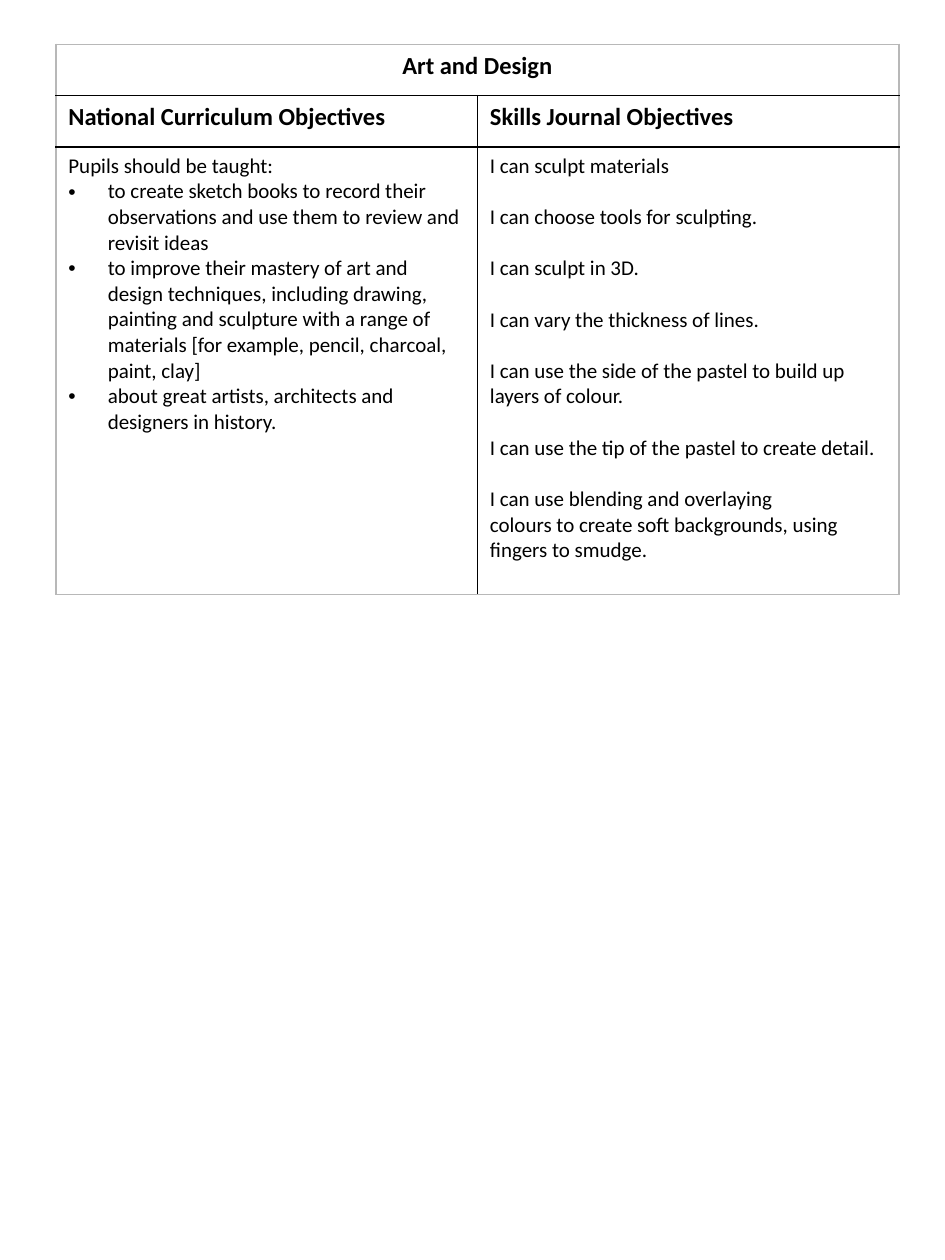
from lxml import etree
from pptx import Presentation
from pptx.dml.color import RGBColor
from pptx.enum.text import PP_ALIGN
from pptx.oxml.ns import qn
from pptx.util import Pt

CENTER, LEFT = PP_ALIGN.CENTER, PP_ALIGN.LEFT

SUBJECT = "Art and Design"
HEADINGS = ["National Curriculum Objectives", "Skills Journal Objectives"]
CURRICULUM_INTRO = "Pupils should be taught:"
CURRICULUM = [
    "to create sketch books to record their observations and use them to review and revisit ideas",
    "to improve their mastery of art and design techniques, including drawing, painting and "
    "sculpture with a range of materials [for example, pencil, charcoal, paint, clay]",
    "about great artists, architects and designers in history.",
]
SKILLS = [
    ["I can sculpt materials"],
    ["I can choose tools for sculpting."],
    ["I can sculpt in 3D."],
    ["I can vary the thickness of lines."],
    ["I can use the side of the pastel to build up layers of colour."],
    ["I can use the tip of the pastel to create detail."],
    [
        "I can use blending and overlaying",
        "colours to create soft backgrounds, using",
        "fingers to smudge.",
    ],
]

THEME = {
    "font": "Calibri",
    "heading": 14,
    "body": 12,
    "ink": "000000",
    "paper": "FFFFFF",
    "frame": "B8B8B8",
}
PAGE_WIDTH, PAGE_HEIGHT = 540, 720
TABLE_LEFT, TABLE_TOP = 31.9, 25.4
COLUMN_WIDTH = 240.9
ROW_HEIGHTS = [29.2, 29.5, 255.6]
BULLET_INDENT = 22.5
SKILL_GAP = 14.65
RULE, HEADING_RULE = 1, 1.5


def write(cell, lines, size, bold=False, align=LEFT):
    for index, (text, bulleted, gap) in enumerate(lines):
        frame = cell.text_frame
        paragraph = frame.paragraphs[0] if index == 0 else frame.add_paragraph()
        paragraph.alignment = align
        paragraph.space_after = Pt(gap)
        run = paragraph.add_run()
        run.text = text
        font_format = {"name": THEME["font"], "size": Pt(size), "bold": bold}
        for attribute, value in font_format.items():
            setattr(run.font, attribute, value)
        run.font.color.rgb = RGBColor.from_string(THEME["ink"])
        if bulleted:
            properties = paragraph._p.get_or_add_pPr()
            properties.set("marL", str(Pt(BULLET_INDENT)))
            properties.set("indent", str(-Pt(BULLET_INDENT)))
            etree.SubElement(properties, qn("a:buFont")).set("typeface", "Arial")
            etree.SubElement(properties, qn("a:buChar")).set("char", "•")


def set_borders(cell, borders):
    properties = cell._tc.get_or_add_tcPr()
    for index, (side, (color, width)) in enumerate(borders.items()):
        line = etree.Element(qn(f"a:ln{side}"), w=str(Pt(width)))
        fill = etree.SubElement(line, qn("a:solidFill"))
        etree.SubElement(fill, qn("a:srgbClr")).set("val", color)
        properties.insert(index, line)


def format_cells(table):
    frame, rule = (THEME["frame"], RULE), (THEME["ink"], RULE)
    row_edges = [frame, rule, (THEME["ink"], HEADING_RULE), frame]
    column_edges = [frame, rule, frame]
    for r, row in enumerate(table.rows):
        for c, cell in enumerate(row.cells):
            cell.fill.solid()
            cell.fill.fore_color.rgb = RGBColor.from_string(THEME["paper"])
            edges = [frame, frame, frame] if r == 0 else column_edges
            set_borders(cell, {
                "L": edges[c],
                "R": edges[c + 1],
                "T": row_edges[r],
                "B": row_edges[r + 1],
            })


def main():
    presentation = Presentation()
    presentation.slide_width = Pt(PAGE_WIDTH)
    presentation.slide_height = Pt(PAGE_HEIGHT)
    slide = presentation.slides.add_slide(presentation.slide_layouts[6])

    table = slide.shapes.add_table(
        len(ROW_HEIGHTS), len(HEADINGS), Pt(TABLE_LEFT), Pt(TABLE_TOP),
        Pt(COLUMN_WIDTH * len(HEADINGS)), Pt(sum(ROW_HEIGHTS)),
    ).table
    for column in table.columns:
        column.width = Pt(COLUMN_WIDTH)
    for row, height in zip(table.rows, ROW_HEIGHTS):
        row.height = Pt(height)
    format_cells(table)
    table.cell(0, 0).merge(table.cell(0, len(HEADINGS) - 1))

    write(table.cell(0, 0), [(SUBJECT, False, 0)], THEME["heading"], True, CENTER)
    for c, heading in enumerate(HEADINGS):
        write(table.cell(1, c), [(heading, False, 0)], THEME["heading"], True)

    curriculum_lines = [(CURRICULUM_INTRO, False, 0)]
    curriculum_lines += [(objective, True, 0) for objective in CURRICULUM]
    skill_lines = [
        (line, False, SKILL_GAP if line == skill[-1] else 0)
        for skill in SKILLS
        for line in skill
    ]
    for c, lines in enumerate([curriculum_lines, skill_lines]):
        write(table.cell(2, c), lines, THEME["body"])

    presentation.save("out.pptx")


if __name__ == "__main__":
    main()
